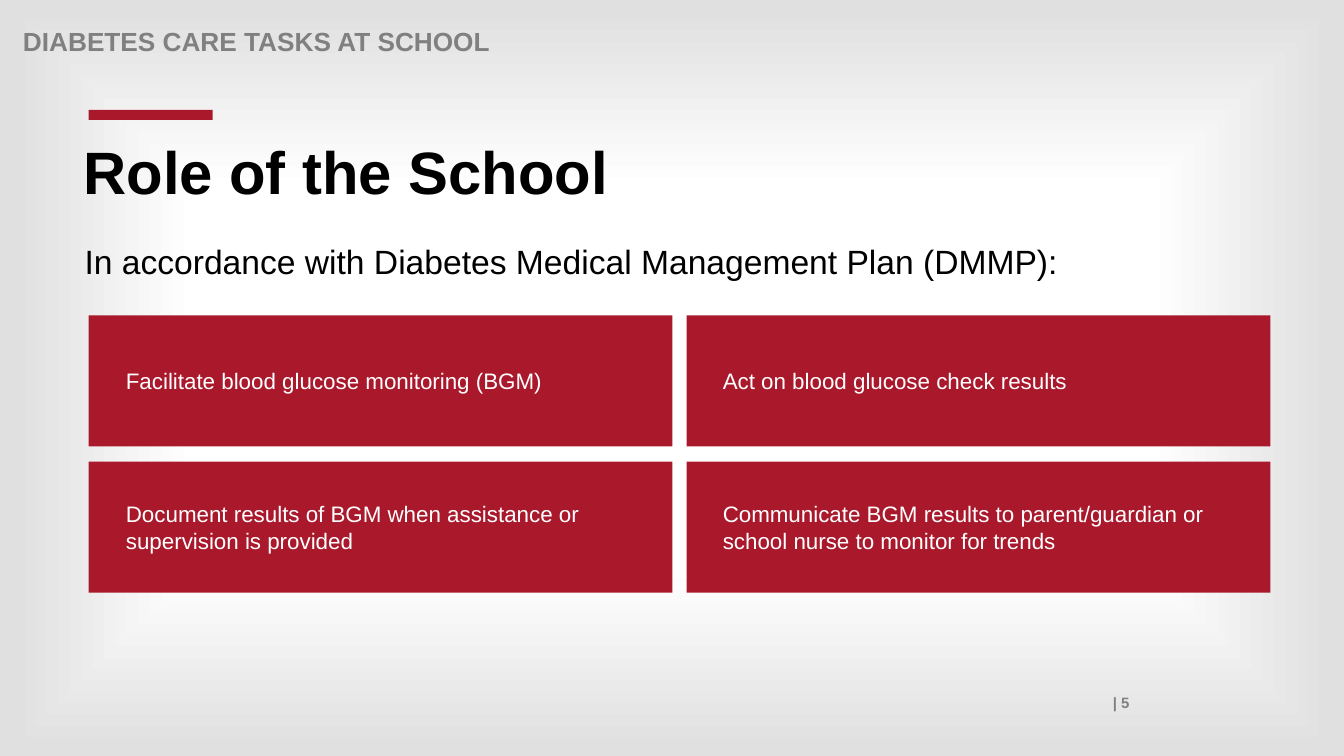
from dataclasses import dataclass

from lxml.etree import fromstring
from pptx import Presentation
from pptx.dml.color import RGBColor
from pptx.enum.shapes import MSO_SHAPE
from pptx.enum.text import MSO_ANCHOR, PP_ALIGN
from pptx.oxml.ns import qn
from pptx.util import Inches, Pt


@dataclass(frozen=True)
class Theme:
    font: str = "Arial"
    red: str = "AA182C"
    gray: str = "808080"
    black: str = "000000"
    white: str = "FFFFFF"
    edge: str = "E0E0E0"
    title_size: float = 42.7
    intro_size: float = 24
    header_size: float = 18.7
    task_size: float = 16
    number_size: float = 10.7


class SlideBuilder:
    def __init__(self, slide, theme):
        self.slide = slide
        self.theme = theme

    def background(self):
        self.slide.background.fill.solid()
        properties = self.slide.background._cSld.bg.bgPr
        stops = [(12, self.theme.white), (50, self.theme.white), (98, self.theme.edge)]
        stop_xml = "".join(
            f'<a:gs pos="{position * 1000}"><a:srgbClr val="{color}"/></a:gs>'
            for position, color in stops
        )
        gradient = fromstring(
            '<a:gradFill xmlns:a="http://schemas.openxmlformats.org/drawingml/2006/main"'
            f' rotWithShape="1"><a:gsLst>{stop_xml}</a:gsLst><a:path path="shape">'
            '<a:fillToRect l="50000" t="50000" r="50000" b="50000"/>'
            "</a:path></a:gradFill>"
        )
        properties.replace(properties.find(qn("a:solidFill")), gradient)

    def block(self, left, top, width, height):
        block = self.slide.shapes.add_shape(
            MSO_SHAPE.RECTANGLE, Inches(left), Inches(top), Inches(width), Inches(height)
        )
        block.shadow.inherit = False
        block.fill.solid()
        block.fill.fore_color.rgb = RGBColor.from_string(self.theme.red)
        block.line.fill.background()

    def text(self, wording, left, top, width, height, size, color, bold=False,
             align=PP_ALIGN.LEFT, anchor=MSO_ANCHOR.TOP, line_spacing=1.0):
        box = self.slide.shapes.add_textbox(
            Inches(left), Inches(top), Inches(width), Inches(height)
        )
        frame = box.text_frame
        frame.word_wrap = True
        frame.vertical_anchor = anchor
        frame.text = wording
        paragraph = frame.paragraphs[0]
        paragraph.alignment = align
        paragraph.line_spacing = line_spacing
        font = paragraph.runs[0].font
        font.name = self.theme.font
        font.size = Pt(size)
        font.bold = bold
        font.color.rgb = RGBColor.from_string(color)


def main():
    presentation = Presentation()
    presentation.slide_width = Inches(13.33)
    presentation.slide_height = Inches(7.5)
    theme = Theme()
    slide = presentation.slides.add_slide(presentation.slide_layouts[6])
    builder = SlideBuilder(slide, theme)

    builder.background()
    builder.text("| 5", 1.21, 6.83, 10.09, 0.28, theme.number_size, theme.gray,
                 bold=True, align=PP_ALIGN.RIGHT)
    builder.text("DIABETES CARE TASKS AT SCHOOL", 0.13, 0.24, 11, 0.28,
                 theme.header_size, theme.gray, bold=True, line_spacing=0.9)
    builder.block(0.88, 1.09, 1.23, 0.1)
    builder.text("Role of the School", 0.73, 1.37, 11.54, 0.79,
                 theme.title_size, theme.black, bold=True, line_spacing=0.9)
    builder.text("In accordance with Diabetes Medical Management Plan (DMMP):",
                 0.74, 2.34, 11.87, 0.5, theme.intro_size, theme.black)

    card_width, card_height = 5.79, 1.3
    card_columns = [(0.88, 1.15, 5.18), (6.81, 7.07, 5.12)]
    card_tops = [3.13, 4.58]
    tasks = [
        ["Facilitate blood glucose monitoring (BGM)",
         "Document results of BGM when assistance or supervision is provided"],
        ["Act on blood glucose check results",
         "Communicate BGM results to parent/guardian or school nurse to monitor for trends"],
    ]
    task_heights = [0.37, 0.64]
    for (card_left, task_left, task_width), column_tasks in zip(card_columns, tasks):
        for card_top, task, task_height in zip(card_tops, column_tasks, task_heights):
            builder.block(card_left, card_top, card_width, card_height)
            task_top = card_top + (card_height - task_height) / 2
            builder.text(task, task_left, task_top, task_width, task_height,
                         theme.task_size, theme.white, anchor=MSO_ANCHOR.MIDDLE)

    presentation.save("out.pptx")


if __name__ == "__main__":
    main()
